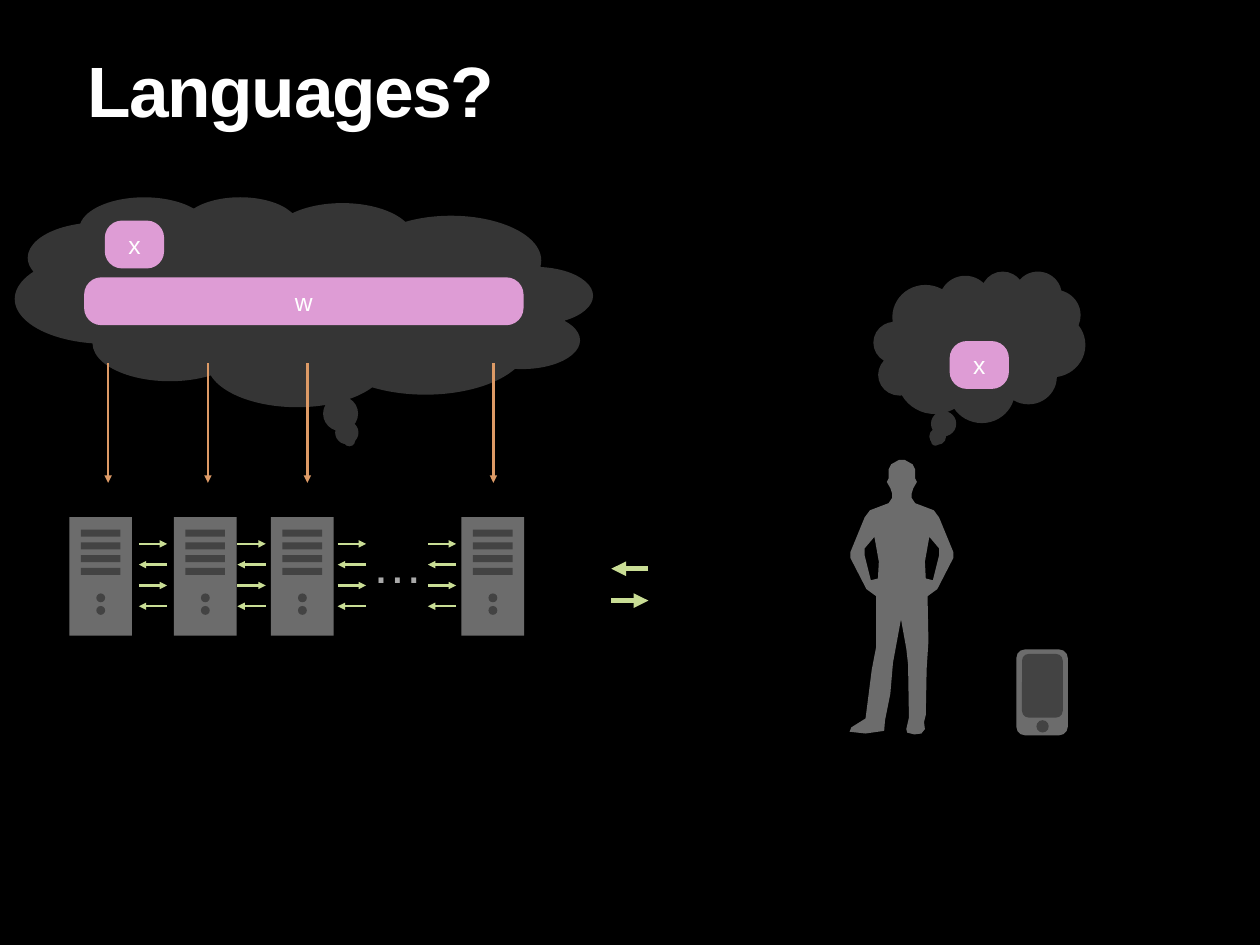
"""Build the "Languages?" slide: a server cloud exchanging messages with a person and a phone."""
import pptx
import pptx.dml.color
import pptx.enum.shapes
import pptx.enum.text
import pptx.oxml.ns
import pptx.util
from lxml import etree

Pt = pptx.util.Pt
qn = pptx.oxml.ns.qn
SHAPE = pptx.enum.shapes.MSO_SHAPE
ALIGN = pptx.enum.text.PP_ALIGN
ANCHOR = pptx.enum.text.MSO_ANCHOR
COLORS = {
    "background": "000000", "white": "FFFFFF", "cloud": "353535",
    "label": "DE9CD5", "body": "6C6C6C", "detail": "434343",
    "message": "C9DD95", "deploy": "DD9A66", "dots": "A9A9A9",
}

deck = pptx.Presentation()
deck.slide_width, deck.slide_height = Pt(1024), Pt(768)
page = deck.slides.add_slide(deck.slide_layouts[5])
page.background.fill.solid()
page.background.fill.fore_color.rgb = pptx.dml.color.RGBColor.from_string(COLORS["background"])


def paint(shape, color):
    shape.shadow.inherit = False
    shape.fill.solid()
    shape.fill.fore_color.rgb = pptx.dml.color.RGBColor.from_string(COLORS[color])
    shape.line.fill.background()
    return shape


def add_arrow(start, end, color, weight):
    arrow = page.shapes.add_connector(
        pptx.enum.shapes.MSO_CONNECTOR.STRAIGHT, *[Pt(value) for value in start + end])
    arrow.line.color.rgb = pptx.dml.color.RGBColor.from_string(COLORS[color])
    arrow.line.width = Pt(weight)
    properties = arrow.element.spPr
    etree.SubElement(properties.get_or_add_ln(), qn("a:tailEnd"), type="triangle")
    etree.SubElement(properties, qn("a:effectLst"))


person_unit, person_axis, person_crown = Pt(0.72), 1018, 519
half_head = [(3, 0), (12, 5), (15, 11), (15, 21), (17, 25), (13, 32)]
half_neck = [(11, 38), (11, 43), (15, 49)]
half_arm = [(36, 57), (42, 65), (58, 104), (58, 111), (40, 146), (29, 154)]
half_arm_gap = [(31, 87), (42, 100), (42, 108), (35, 136), (27, 134), (26, 115)]
left_leg = [(-29, 211), (-34, 237), (-41, 292)]
left_foot = [(-57, 302), (-59, 307), (-41, 309), (-20, 306), (-19, 294)]
left_inseam = [(-13, 264), (-10, 229), (-1, 180)]
right_inseam = [(5, 213), (7, 231), (8, 291)]
right_foot = [(5, 304), (6, 308), (14, 310), (22, 309), (26, 304), (25, 296)]
right_leg = [(27, 288), (28, 236), (30, 205)]

right_half = half_head + half_neck + half_arm
left_half = [(-across, down) for across, down in right_half]
legs = left_leg + left_foot + left_inseam + right_inseam + right_foot + right_leg
silhouette = left_half + legs + right_half[::-1]
left_arm_gap = [(-across, down) for across, down in half_arm_gap]

person_builder = page.shapes.build_freeform(
    person_axis + silhouette[0][0], person_crown, scale=person_unit)
for outline in (silhouette, left_arm_gap, half_arm_gap):
    points = [(person_axis + across, person_crown + down) for across, down in outline]
    if outline is not silhouette:
        person_builder.move_to(*points[0])
    person_builder.add_line_segments(points[1:], close=True)
paint(person_builder.convert_to_shape(), "body")

blocks = {}
for name, geometry, left, top, width, height, color, adjustments in [
    ("server cloud", SHAPE.CLOUD_CALLOUT, 12.2, 159.8, 469.4, 170.6, "cloud", [-0.079, 0.662]),
    ("person cloud", SHAPE.CLOUD_CALLOUT, 709.9, 220.3, 172.1, 123.1, "cloud", [-0.208, 0.625]),
    ("server x", SHAPE.ROUNDED_RECTANGLE, 85.2, 179.3, 48.2, 38.9, "label", [0.359]),
    ("server w", SHAPE.ROUNDED_RECTANGLE, 68.4, 225.4, 357.1, 38.9, "label", [0.359]),
    ("person x", SHAPE.ROUNDED_RECTANGLE, 771.8, 277.2, 48.2, 38.9, "label", [0.359]),
    ("phone", SHAPE.ROUNDED_RECTANGLE, 826, 527.8, 41.8, 69.8, "body", []),
    ("phone screen", SHAPE.ROUNDED_RECTANGLE, 830.6, 531.4, 33.1, 51.8, "detail", []),
    ("phone button", SHAPE.OVAL, 842.3, 585.3, 10, 10, "detail", []),
]:
    block = page.shapes.add_shape(geometry, Pt(left), Pt(top), Pt(width), Pt(height))
    blocks[name] = paint(block, color)
    for index, value in enumerate(adjustments):
        block.adjustments[index] = value
blocks["server cloud"].element.spPr.xfrm.set("flipH", "1")

server_top = 420.3
server_parts = [(SHAPE.RECTANGLE, 0, 0, 51, 96.3, "body")]
server_parts += [(SHAPE.RECTANGLE, 9.4, 10.1 + 10.4 * slot, 32.2, 5.7, "detail")
                 for slot in range(4)]
server_parts += [(SHAPE.OVAL, 22, 62 + 10.2 * button, 7.2, 7.2, "detail")
                 for button in range(2)]
for server_left in (56.3, 141.3, 220.2, 375):
    for geometry, across, down, width, height, color in server_parts:
        paint(page.shapes.add_shape(geometry, Pt(server_left + across), Pt(server_top + down),
                                    Pt(width), Pt(height)), color)

for deploy_left in (87.9, 169, 249.8, 401):
    add_arrow((deploy_left, 295.2), (deploy_left, 392.4), "deploy", 2)

message_length, message_gap = 23, 16.9
for message_left in (112.8, 193, 274.5, 347.7):
    for row in range(4):
        message_top = 442 + message_gap * row
        ends = [(message_left, message_top), (message_left + message_length, message_top)]
        if row % 2:
            ends.reverse()
        add_arrow(*ends, "message", 2)

cloud_side, person_side = 496.8, 527
add_arrow((person_side, 462.2), (cloud_side, 462.2), "message", 4)
add_arrow((cloud_side, 488.1), (person_side, 488.1), "message", 4)

ellipsis_box = page.shapes.add_textbox(Pt(245.5), Pt(428.4), Pt(154.8), Pt(57.6))
title = page.shapes.title
title.left, title.top, title.width, title.height = Pt(67), Pt(46.8), Pt(913.7), Pt(79.9)

for box, text, size, color, align, anchor in [
    (blocks["server x"], "x", 20, "white", ALIGN.CENTER, ANCHOR.MIDDLE),
    (blocks["server w"], "w", 20, "white", ALIGN.CENTER, ANCHOR.MIDDLE),
    (blocks["person x"], "x", 20, "white", ALIGN.CENTER, ANCHOR.MIDDLE),
    (ellipsis_box, "…", 42, "dots", ALIGN.CENTER, ANCHOR.MIDDLE),
    (title, "Languages?", 57.9, "white", ALIGN.LEFT, ANCHOR.TOP),
]:
    frame = box.text_frame
    frame.word_wrap = True
    frame.auto_size = pptx.enum.text.MSO_AUTO_SIZE.NONE
    frame.vertical_anchor = anchor
    frame.margin_left = frame.margin_right = frame.margin_top = frame.margin_bottom = Pt(4)
    para = frame.paragraphs[0]
    para.alignment = align
    span = para.add_run()
    span.text = text
    span.font.name = "Arial"
    span.font.size = Pt(size)
    span.font.color.rgb = pptx.dml.color.RGBColor.from_string(COLORS[color])

title_para = title.text_frame.paragraphs[0]
title_para.line_spacing = 0.8
title_para.runs[0].font.bold = True
title.element.find(".//" + qn("a:rPr")).set("spc", "-120")

deck.save("out.pptx")
